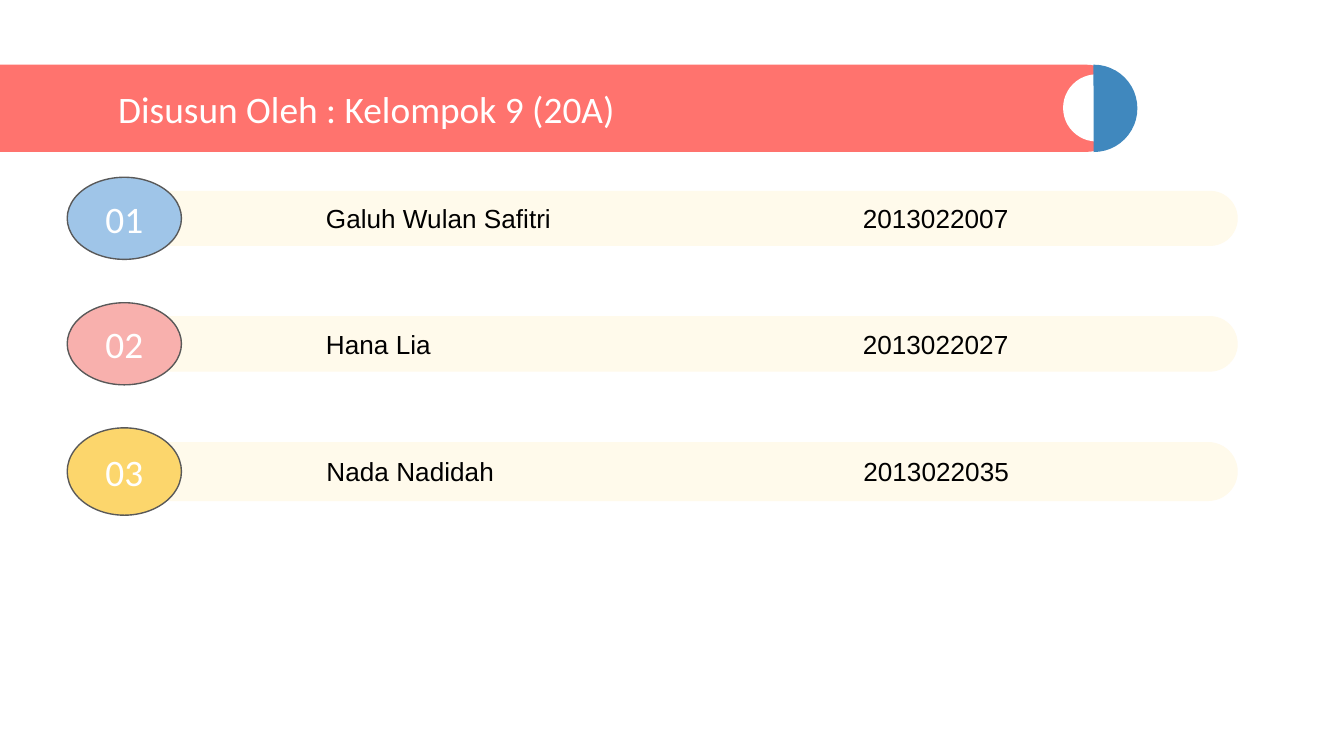
from dataclasses import dataclass

from lxml import etree
from pptx import Presentation
from pptx.dml.color import RGBColor
from pptx.enum import shapes, text
from pptx.oxml import ns
from pptx.shapes.autoshape import Shape
from pptx.shapes.shapetree import GroupShapes
from pptx.util import Pt

COLORS = {
    "coral": "FF736E",
    "blue": "4088BE",
    "cream": "FFFAEB",
    "sky": "9FC5E8",
    "pink": "F8B0AD",
    "yellow": "FCD66C",
    "gray": "595959",
    "white": "FFFFFF",
    "black": "000000",
}
KIND = shapes.MSO_SHAPE
BAR_INSET = 118.5
NUMBER_TAB = 287.6


@dataclass
class Member:
    label: str
    name: str
    number: str
    color: str
    middle: float
    bar_height: float
    badge_height: float


MEMBERS = [
    Member("01", "Galuh Wulan Safitri", "2013022007", "sky", 117, 29.5, 44),
    Member("02", "Hana Lia", "2013022027", "pink", 184.2, 29.8, 44),
    Member("03", "Nada Nadidah", "2013022035", "yellow", 252.6, 31.6, 46.8),
]


def add_shape(target, kind: shapes.MSO_SHAPE, left: float, top: float,
              width: float, height: float, color: str) -> Shape:
    shape = target.add_shape(kind, Pt(left), Pt(top), Pt(width), Pt(height))
    shape.shadow.inherit = False
    shape.fill.solid()
    shape.fill.fore_color.rgb = RGBColor.from_string(COLORS[color])
    shape.line.fill.background()
    return shape


def write(box: Shape, content: str, font: str, size: float, color: str,
          align: text.PP_ALIGN, inset: float = 7.2,
          tab: float | None = None) -> None:
    frame = box.text_frame
    frame.word_wrap = True
    frame.vertical_anchor = text.MSO_ANCHOR.MIDDLE
    frame.margin_left = Pt(inset)
    frame.margin_right = frame.margin_top = frame.margin_bottom = Pt(7.2)
    frame.text = content
    para = frame.paragraphs[0]
    para.alignment = align
    if tab is not None:
        properties = para._p.get_or_add_pPr()
        tabs = etree.SubElement(properties, ns.qn("a:tabLst"))
        etree.SubElement(tabs, ns.qn("a:tab"), pos=str(Pt(tab)), algn="l")
    for span in para.runs:
        span.font.name = font
        span.font.size = Pt(size)
        span.font.color.rgb = RGBColor.from_string(COLORS[color])


def add_header(target: GroupShapes) -> None:
    banner = add_shape(target, KIND.ROUNDED_RECTANGLE, -23, 34.6, 627.8, 46.8, "coral")
    banner.adjustments[0] = 0.5
    add_shape(target, KIND.OVAL, 569.5, 39.8, 36, 36, "white").rotation = 180
    half = add_shape(target, KIND.PIE, 562.5, 34.6, 46.8, 46.8, "blue")
    half.rotation = 180
    half.adjustments[0] = 53.67
    half.adjustments[1] = 162
    title = target.add_textbox(Pt(56.2), Pt(43.2), Pt(501.8), Pt(29.5))
    write(title, "Disusun Oleh : Kelompok 9 (20A)", "Calibri", 20, "white",
          text.PP_ALIGN.LEFT)


def add_member(target: GroupShapes, member: Member) -> None:
    row = target.add_group_shape().shapes
    bar = add_shape(row, KIND.ROUNDED_RECTANGLE, 51.8,
                    member.middle - member.bar_height / 2, 611.3,
                    member.bar_height, "cream")
    bar.adjustments[0] = 0.5
    write(bar, f"{member.name}\t{member.number}", "Arial", 14, "black",
          text.PP_ALIGN.LEFT, BAR_INSET, NUMBER_TAB)
    badge = add_shape(row, KIND.OVAL, 36, member.middle - member.badge_height / 2,
                      61.2, member.badge_height, member.color)
    badge.line.color.rgb = RGBColor.from_string(COLORS["gray"])
    badge.line.width = Pt(0.75)
    write(badge, member.label, "Calibri", 20, "white", text.PP_ALIGN.CENTER)


def main() -> None:
    deck = Presentation()
    deck.slide_width, deck.slide_height = Pt(720), Pt(405)
    page = deck.slides.add_slide(deck.slide_layouts[6])
    add_header(page.shapes)
    for member in MEMBERS:
        add_member(page.shapes, member)
    deck.save("out.pptx")


if __name__ == "__main__":
    main()
